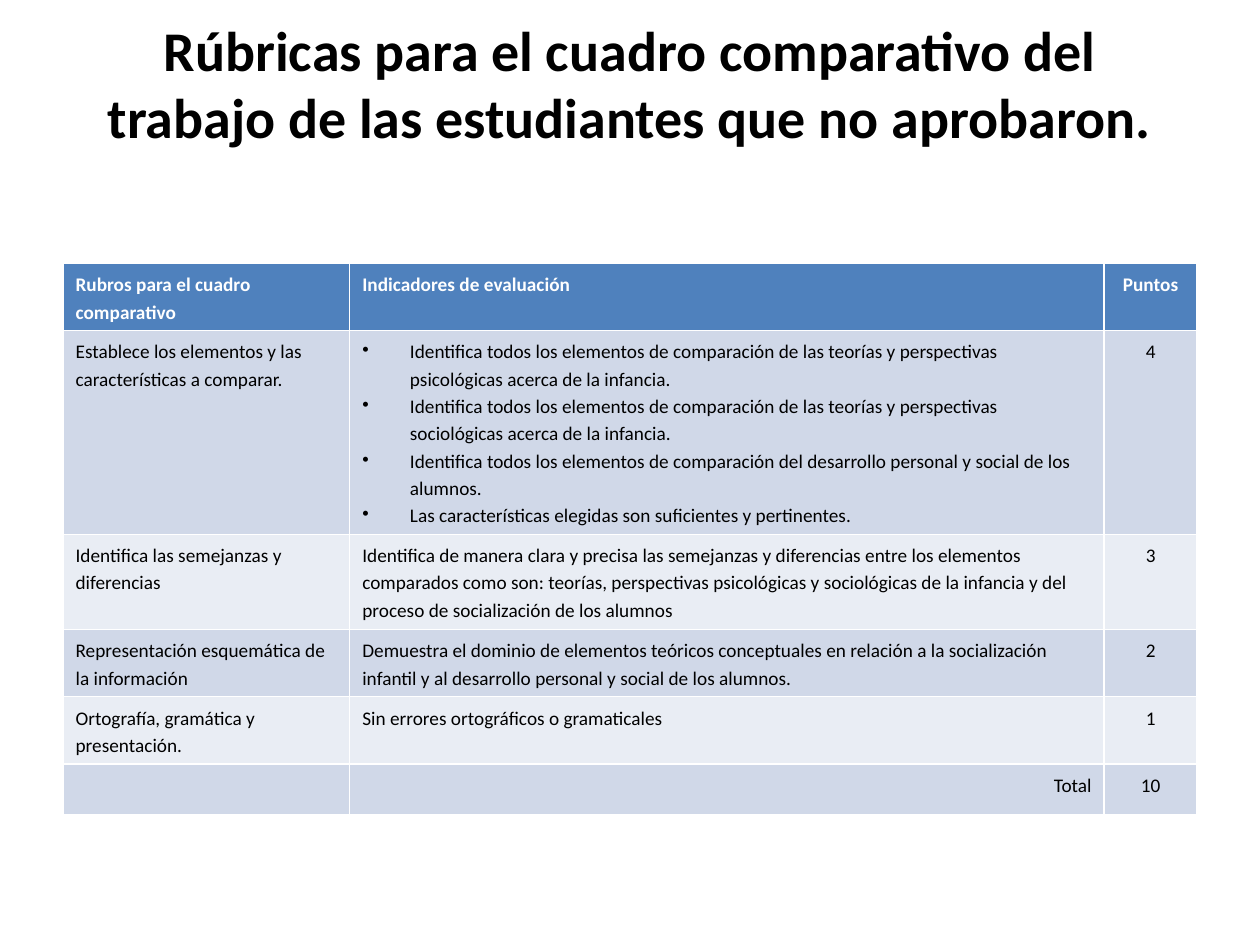
"""Build the slide with the grading rubric for the comparative chart."""
import lxml.etree
import pptx
import pptx.dml.color
import pptx.enum.text
import pptx.oxml.ns
import pptx.util

Cm = pptx.util.Cm
Pt = pptx.util.Pt
RGBColor = pptx.dml.color.RGBColor
Align = pptx.enum.text.PP_ALIGN

BLACK = RGBColor(0x00, 0x00, 0x00)
WHITE = RGBColor(0xFF, 0xFF, 0xFF)
HEADER_BLUE = RGBColor(0x4F, 0x81, 0xBD)
BAND_FILLS = [RGBColor(0xE9, 0xED, 0xF4), RGBColor(0xD0, 0xD8, 0xE8)]

TITLE = "Rúbricas para el cuadro comparativo del trabajo de las estudiantes que no aprobaron."
RUBRIC = [
    ["Rubros para el cuadro comparativo", "Indicadores de evaluación", "Puntos"],
    [
        "Establece los elementos y las características a comparar.",
        "Identifica todos los elementos de comparación de las teorías y perspectivas "
        "psicológicas acerca de la infancia.\n"
        "Identifica todos los elementos de comparación de las teorías y perspectivas "
        "sociológicas acerca de la infancia.\n"
        "Identifica todos los elementos de comparación del desarrollo personal y social "
        "de los alumnos.\n"
        "Las características elegidas son suficientes y pertinentes.",
        "4",
    ],
    [
        "Identifica las semejanzas y diferencias",
        "Identifica de manera clara y precisa las semejanzas y diferencias entre los "
        "elementos comparados como son: teorías, perspectivas psicológicas y sociológicas "
        "de la infancia y del proceso de socialización de los alumnos",
        "3",
    ],
    [
        "Representación esquemática de la información",
        "Demuestra el dominio de elementos teóricos conceptuales en relación a la "
        "socialización infantil y al desarrollo personal y social de los alumnos.",
        "2",
    ],
    ["Ortografía, gramática y presentación.", "Sin errores ortográficos o gramaticales", "1"],
    ["", "Total", "10"],
]
COLUMN_WIDTHS = [5.78, 15.21, 1.87]
ROW_HEIGHTS = [1.33, 4.09, 1.92, 1.35, 1.35, 1.02]


def format_runs(paragraph, size, color, bold):
    for run in paragraph.runs:
        run.font.name = "Calibri"
        run.font.size = Pt(size)
        run.font.bold = bold
        run.font.color.rgb = color


def add_bullet(paragraph):
    properties = paragraph._p.get_or_add_pPr()
    properties.set("marL", str(Cm(0.96)))
    properties.set("indent", str(-Cm(0.96)))
    bullet = lxml.etree.SubElement(properties, pptx.oxml.ns.qn("a:buChar"))
    bullet.set("char", "•")


presentation = pptx.Presentation()
presentation.slide_width = Cm(25.4)
presentation.slide_height = Cm(19.05)
slide = presentation.slides.add_slide(presentation.slide_layouts[5])

title = slide.shapes.title
title.left, title.top, title.width, title.height = Cm(1.27), Cm(0.76), Cm(22.86), Cm(3.18)
title.text_frame.text = TITLE
title.text_frame.vertical_anchor = pptx.enum.text.MSO_ANCHOR.MIDDLE
title.text_frame.margin_bottom = Cm(1.5)
title.text_frame.paragraphs[0].alignment = Align.CENTER
format_runs(title.text_frame.paragraphs[0], 32, BLACK, True)

table = slide.shapes.add_table(
    len(RUBRIC), len(COLUMN_WIDTHS), Cm(1.27), Cm(5.31), Cm(22.86), Cm(sum(ROW_HEIGHTS))
).table
for column, width in zip(table.columns, COLUMN_WIDTHS):
    column.width = Cm(width)
for row, height in zip(table.rows, ROW_HEIGHTS):
    row.height = Cm(height)

for row_index, texts in enumerate(RUBRIC):
    is_header = row_index == 0
    for column_index, text in enumerate(texts):
        cell = table.cell(row_index, column_index)
        cell.fill.solid()
        cell.fill.fore_color.rgb = HEADER_BLUE if is_header else BAND_FILLS[row_index % 2]
        if not text:
            continue
        cell.text_frame.text = text
        paragraphs = cell.text_frame.paragraphs
        for paragraph in paragraphs:
            paragraph.line_spacing = 1.15
            paragraph.alignment = Align.CENTER if column_index == 2 else Align.LEFT
            if text == "Total":
                paragraph.alignment = Align.RIGHT
            format_runs(paragraph, 11, WHITE if is_header else BLACK, is_header)
        paragraphs[-1].space_after = Pt(10)
        if len(paragraphs) > 1:
            for paragraph in paragraphs:
                add_bullet(paragraph)

presentation.save("out.pptx")
